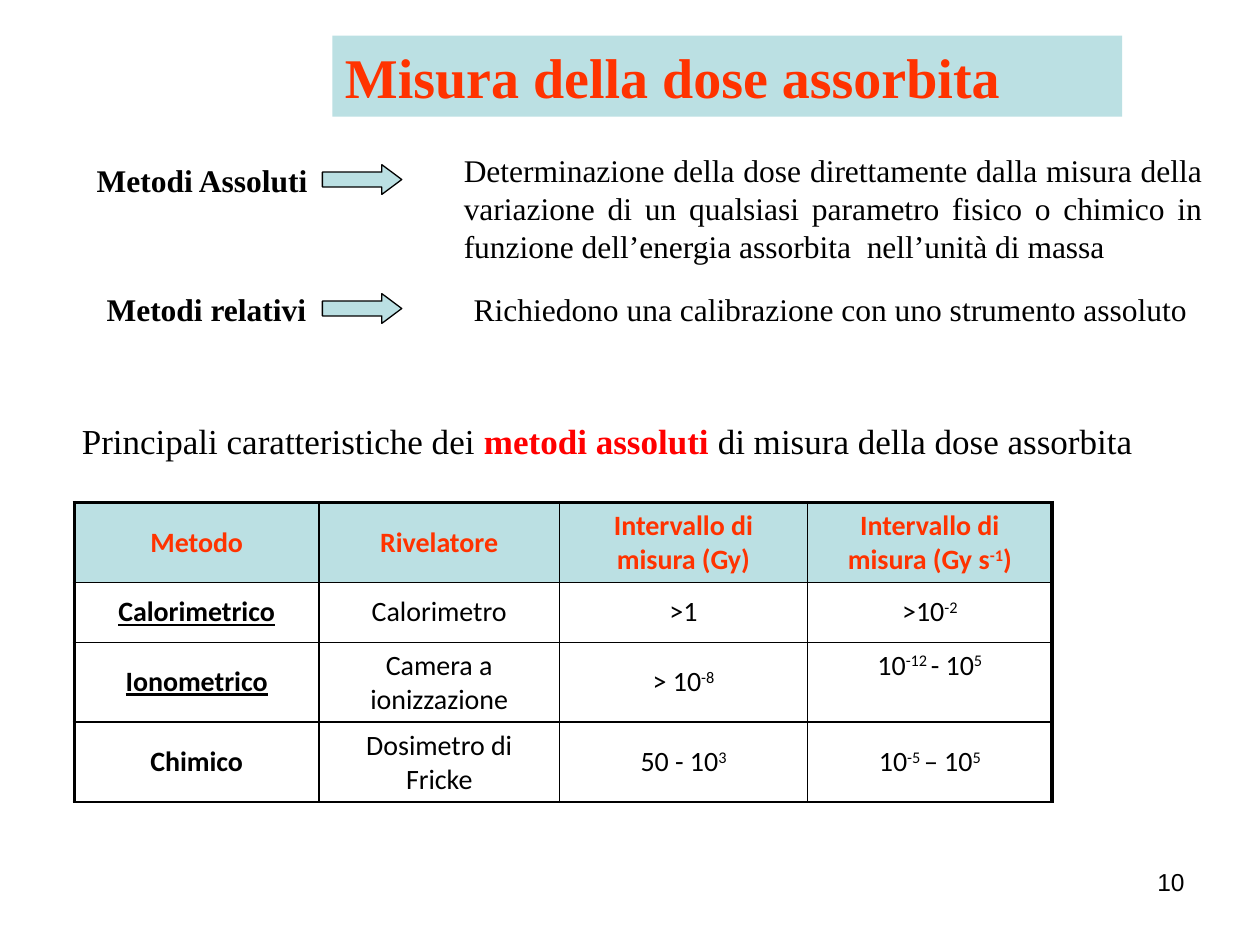
from lxml.etree import SubElement
from pptx import Presentation
from pptx.dml.color import RGBColor
from pptx.enum.shapes import MSO_SHAPE
from pptx.enum.text import MSO_ANCHOR, MSO_AUTO_SIZE, PP_ALIGN
from pptx.oxml.ns import qn
from pptx.util import Cm, Pt

SERIF = "Times New Roman"
PALE_BLUE, ORANGE, RED, BLACK = "BBE0E3", "FF3300", "FF0000", "000000"

METHODS = [
    ["Metodo", "Rivelatore", "Intervallo di misura (Gy)", "Intervallo di misura (Gy s^-1^)"],
    ["Calorimetrico", "Calorimetro", ">1", ">10^-2"],
    ["Ionometrico", "Camera a ionizzazione", "> 10^-8", "10^-12 ^- 10^5"],
    ["Chimico", "Dosimetro di Fricke", "50 - 10^3", "10^-5 ^– 10^5"],
]
UNDERLINED = ("Calorimetrico", "Ionometrico")
COLUMN_WIDTHS = [4.93, 4.85, 5, 4.93]
ROW_HEIGHTS = [1.6, 1.21, 1.6, 1.6]


def rgb(color):
    return RGBColor.from_string(color)


def format_run(run, size, font=SERIF, color=BLACK, bold=False):
    run.font.size = Pt(size)
    run.font.name = font
    run.font.color.rgb = rgb(color)
    run.font.bold = bold


def place(shape, left, top, width, height):
    shape.left, shape.top, shape.width, shape.height = map(Cm, (left, top, width, height))


def add_title(slide, text):
    title = slide.shapes.title
    place(title, 6.7, 0.72, 15.92, 1.63)
    title.fill.solid()
    title.fill.fore_color.rgb = rgb(PALE_BLUE)
    frame = title.text_frame
    frame.text = text
    frame.auto_size = MSO_AUTO_SIZE.NONE
    frame.vertical_anchor = MSO_ANCHOR.TOP
    frame.paragraphs[0].alignment = PP_ALIGN.LEFT
    format_run(frame.paragraphs[0].runs[0], 32, color=ORANGE, bold=True)


def add_text(slide, box, parts, size, align=PP_ALIGN.JUSTIFY, font=SERIF):
    """Write parts, given as (text, color, bold), as one paragraph."""
    frame = slide.shapes.add_textbox(*map(Cm, box)).text_frame
    frame.word_wrap = True
    paragraph = frame.paragraphs[0]
    paragraph.alignment = align
    for text, color, bold in parts:
        run = paragraph.add_run()
        run.text = text
        format_run(run, size, font, color, bold)


def add_arrow(slide, top):
    arrow = slide.shapes.add_shape(MSO_SHAPE.RIGHT_ARROW, Cm(6.5), Cm(top), Cm(1.6), Cm(0.6))
    arrow.adjustments[1] = 0.67
    arrow.shadow.inherit = False
    arrow.fill.solid()
    arrow.fill.fore_color.rgb = rgb(PALE_BLUE)
    arrow.line.color.rgb = rgb(BLACK)
    arrow.line.width = Pt(0.75)


def set_borders(cell, widths):
    """Draw black borders; widths maps L, R, T and B to points, in that order."""
    properties = cell._tc.get_or_add_tcPr()
    for side, width in widths.items():
        line = SubElement(properties, qn(f"a:ln{side}"), w=str(Pt(width)))
        fill = SubElement(line, qn("a:solidFill"))
        SubElement(fill, qn("a:srgbClr"), val=BLACK)


def write_cell(cell, text, color, bold):
    """Write text, where every second part between ^ marks is superscript."""
    cell.vertical_anchor = MSO_ANCHOR.MIDDLE
    paragraph = cell.text_frame.paragraphs[0]
    paragraph.alignment = PP_ALIGN.CENTER
    for index, part in enumerate(text.split("^")):
        if not part:
            continue
        run = paragraph.add_run()
        run.text = part
        format_run(run, 16, "Calibri", color, bold)
        run.font.underline = text in UNDERLINED
        if index % 2:
            run._r.get_or_add_rPr().set("baseline", "30000")


def add_methods_table(slide):
    table = slide.shapes.add_table(
        len(METHODS), len(COLUMN_WIDTHS), Cm(1.5), Cm(10.13),
        Cm(sum(COLUMN_WIDTHS)), Cm(sum(ROW_HEIGHTS))).table
    for column, width in zip(table.columns, COLUMN_WIDTHS):
        column.width = Cm(width)
    for row, height in zip(table.rows, ROW_HEIGHTS):
        row.height = Cm(height)
    last = len(COLUMN_WIDTHS) - 1
    for r, texts in enumerate(METHODS):
        for c, text in enumerate(texts):
            cell = table.cell(r, c)
            header = r == 0
            write_cell(cell, text, ORANGE if header else BLACK, header or c == 0)
            set_borders(cell, {"L": 2.25 if c == 0 else 1, "R": 2.25 if c == last else 1,
                               "T": 2.25 if header else 1, "B": 1})
            if header:
                cell.fill.solid()
                cell.fill.fore_color.rgb = rgb(PALE_BLUE)
            else:
                cell.fill.background()
    table.cell(2, last).vertical_anchor = MSO_ANCHOR.TOP


def main():
    presentation = Presentation()
    presentation.slide_width, presentation.slide_height = Cm(25.4), Cm(19.05)
    slide = presentation.slides.add_slide(presentation.slide_layouts[5])

    add_text(slide, (18.2, 17.35, 5.93, 1.32), [("10", BLACK, False)], 14,
             PP_ALIGN.RIGHT, "Arial")
    add_title(slide, "Misura della dose assorbita")
    add_methods_table(slide)

    add_text(slide, (1.7, 3.13, 11, 1.02), [("Metodi Assoluti ", BLACK, True)], 18)
    add_arrow(slide, 3.32)
    add_text(slide, (9.1, 2.93, 15.4, 2.57), [(
        "Determinazione della dose direttamente dalla misura della variazione di un "
        "qualsiasi parametro fisico o chimico in funzione dell’energia assorbita  "
        "nell’unità di massa", BLACK, False)], 18)

    add_text(slide, (1.9, 5.72, 11, 1.02), [("Metodi relativi  ", BLACK, True)], 18)
    add_arrow(slide, 5.92)
    add_text(slide, (9.3, 5.72, 15.4, 1.02),
             [("Richiedono una calibrazione con uno strumento assoluto", BLACK, False)], 18)

    add_text(slide, (1.4, 8.33, 22.3, 1.12), [
        ("Principali caratteristiche dei ", BLACK, False),
        ("metodi assoluti ", RED, True),
        ("di misura della dose assorbita", BLACK, False)], 20, PP_ALIGN.LEFT)

    presentation.save("out.pptx")


if __name__ == "__main__":
    main()
